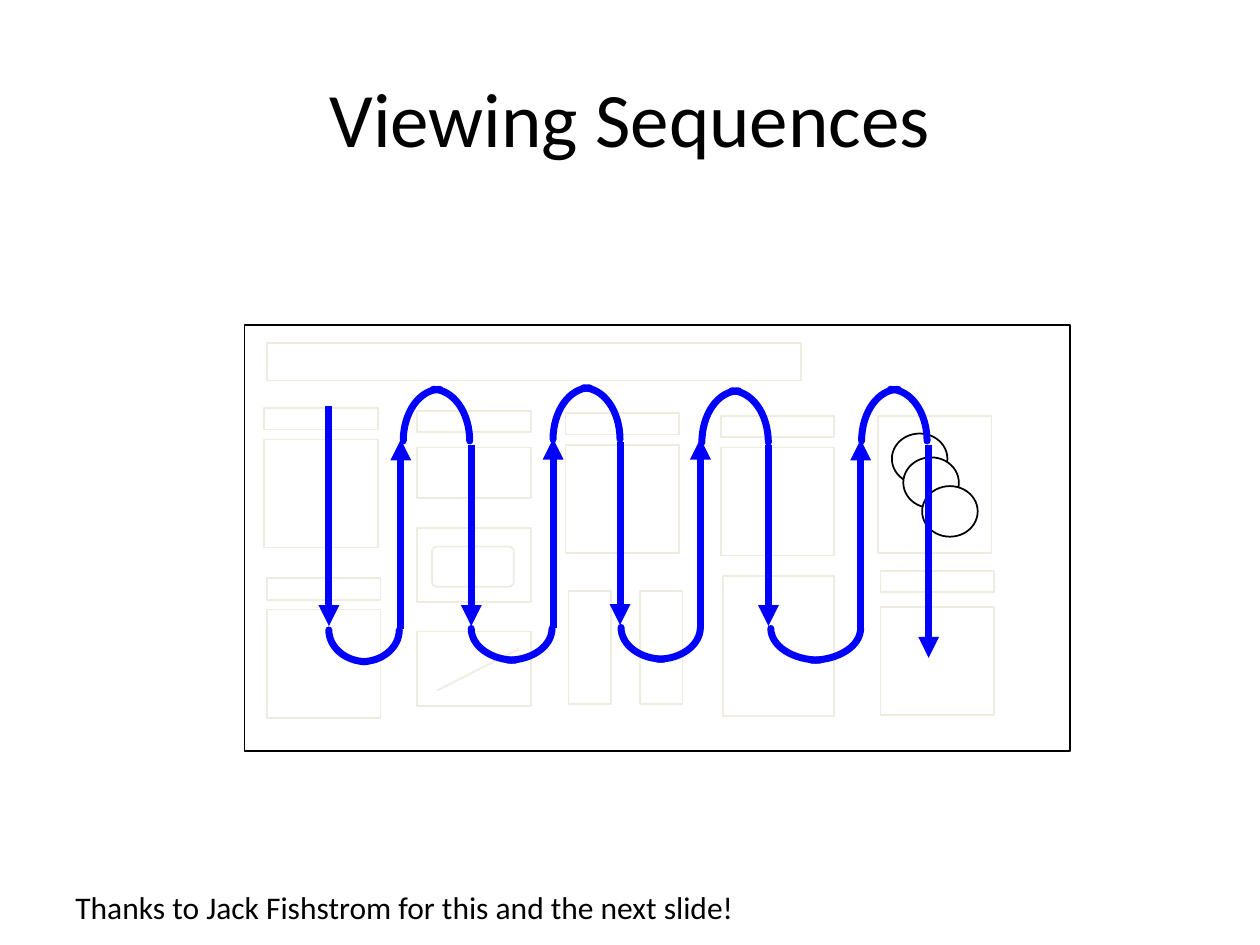
from math import cos, pi, sin

from lxml.etree import SubElement
from pptx import Presentation
from pptx.dml.color import RGBColor
from pptx.enum.shapes import MSO_CONNECTOR, MSO_SHAPE
from pptx.enum.text import MSO_ANCHOR, MSO_AUTO_SIZE, PP_ALIGN
from pptx.oxml.ns import qn
from pptx.util import Cm, Pt

BLACK = RGBColor(0x00, 0x00, 0x00)
WHITE = RGBColor(0xFF, 0xFF, 0xFF)
PALE = RGBColor(0xEE, 0xEC, 0xE1)
BLUE = RGBColor(0x00, 0x00, 0xFF)

BOX_WIDTH = 2.29
LABEL_HEIGHT = 0.43
PANEL_HEIGHT = 2.18
QUARTER_STEPS = 16

LABELLED_PANELS = [
    (5.33, 8.23, 8.86), (5.38, 11.66, 12.29), (11.4, 8.33, 8.97),
    (14.53, 8.38, 9.02), (17.75, 11.51, 12.24),
]
OTHER_BOXES = [
    (5.38, 6.91, 13.56 - 2.79, 0.76),
    (8.41, 8.28, BOX_WIDTH, LABEL_HEIGHT),
    (8.41, 9.02, BOX_WIDTH, 1.02),
    (8.41, 10.64, BOX_WIDTH, 1.5),
    (8.41, 12.73, BOX_WIDTH, 1.5),
    (11.46, 11.91, 0.86, 2.29),
    (12.9, 11.91, 0.86, 2.29),
    (14.58, 11.61, 2.24, 2.82),
    (17.7, 8.38, BOX_WIDTH, 2.77),
]
CIRCLES = [(17.98, 8.74), (18.21, 9.22), (18.59, 9.8)]
ARROWS = [
    (6.63, 8.18, 12.62), (8.08, 12.67, 8.86), (9.5, 8.97, 12.62),
    (11.15, 12.65, 8.84), (12.5, 8.92, 12.6), (14.12, 12.65, 8.84),
    (15.49, 8.97, 12.62), (17.35, 12.67, 8.86), (18.72, 8.97, 13.26),
]
UPPER_BENDS = [
    (8.13, 9.47, 8.89), (11.15, 12.5, 8.86),
    (14.15, 15.49, 8.92), (17.37, 18.69, 8.89),
]
LOWER_BENDS = [
    (6.63, 8.05, 12.7, 0.76), (9.5, 11.13, 12.67, 0.89),
    (12.52, 14.12, 12.65, 0.86), (15.54, 17.35, 12.67, 0.99),
]


def format_text(paragraph, text, size):
    paragraph.text = text
    paragraph.font.name = "Calibri"
    paragraph.font.size = Pt(size)
    paragraph.font.color.rgb = BLACK


def place_title(slide, text):
    title = slide.shapes.title
    title.left, title.top = Cm(1.27), Cm(0.76)
    title.width, title.height = Cm(22.86), Cm(3.18)
    title.text_frame.vertical_anchor = MSO_ANCHOR.MIDDLE
    paragraph = title.text_frame.paragraphs[0]
    format_text(paragraph, text, 44)
    paragraph.alignment = PP_ALIGN.CENTER


def add_credit(slide, text):
    box = slide.shapes.add_textbox(Cm(1.27), Cm(17.78), Cm(13.92), Cm(1.02))
    box.text_frame.word_wrap = False
    box.text_frame.auto_size = MSO_AUTO_SIZE.SHAPE_TO_FIT_TEXT
    format_text(box.text_frame.paragraphs[0], text, 18)


def add_outline(shapes, left, top, width, height, color, kind=MSO_SHAPE.RECTANGLE):
    shape = shapes.add_shape(kind, Cm(left), Cm(top), Cm(width), Cm(height))
    shape.shadow.inherit = False
    shape.fill.solid()
    shape.fill.fore_color.rgb = WHITE
    shape.line.color.rgb = color
    shape.line.width = Pt(1)
    return shape


def add_line(shapes, start, end, color, width):
    line = shapes.add_connector(
        MSO_CONNECTOR.STRAIGHT, Cm(start[0]), Cm(start[1]), Cm(end[0]), Cm(end[1])
    )
    line.line.color.rgb = color
    line.line.width = Pt(width)
    SubElement(line._element.spPr, qn("a:effectLst"))
    return line


def add_arrow(shapes, x, start, end):
    arrow = add_line(shapes, (x, start), (x, end), BLUE, 4)
    SubElement(arrow.line._get_or_add_ln(), qn("a:tailEnd"), type="triangle")


def add_quarter(shapes, center_x, center_y, radius_x, radius_y):
    angles = [pi / 2 * step / QUARTER_STEPS for step in range(QUARTER_STEPS + 1)]
    points = [
        (Cm(center_x + radius_x * cos(angle)), Cm(center_y + radius_y * sin(angle)))
        for angle in angles
    ]
    builder = shapes.build_freeform(*points[0])
    builder.add_line_segments(points[1:], close=False)
    quarter = builder.convert_to_shape()
    quarter.shadow.inherit = False
    quarter.fill.background()
    quarter.line.color.rgb = BLUE
    quarter.line.width = Pt(4)
    quarter.line._get_or_add_ln().set("cap", "rnd")


def add_bend(shapes, left, right, base, radius_x, radius_y):
    add_quarter(shapes, left + radius_x, base, -radius_x, radius_y)
    add_quarter(shapes, right - radius_x, base, radius_x, radius_y)


def add_poster(slide):
    add_outline(slide.shapes, 4.93, 6.55, 16.64, 8.59, BLACK)
    shapes = slide.shapes.add_group_shape().shapes
    for left, label_top, panel_top in LABELLED_PANELS:
        add_outline(shapes, left, label_top, BOX_WIDTH, LABEL_HEIGHT, PALE)
        add_outline(shapes, left, panel_top, BOX_WIDTH, PANEL_HEIGHT, PALE)
    for box in OTHER_BOXES:
        add_outline(shapes, *box, PALE)
    rounded = add_outline(
        shapes, 8.71, 11.02, 1.65, 0.81, PALE, MSO_SHAPE.ROUNDED_RECTANGLE
    )
    rounded.adjustments[0] = 0.125
    add_line(shapes, (8.81, 13.92), (10.46, 13.08), PALE, 1)


def add_circles(slide):
    shapes = slide.shapes.add_group_shape().shapes
    for left, top in CIRCLES:
        add_outline(shapes, left, top, 1.12, 1.02, BLACK, MSO_SHAPE.OVAL)


def add_viewing_path(slide):
    shapes = slide.shapes.add_group_shape().shapes
    for arrow in ARROWS:
        add_arrow(shapes, *arrow)
    for bend in UPPER_BENDS:
        add_bend(shapes, *bend, 0.74, -1.04)
    for bend in LOWER_BENDS:
        add_bend(shapes, *bend, 0.64)


def main():
    presentation = Presentation()
    presentation.slide_width = Cm(25.4)
    presentation.slide_height = Cm(19.05)
    slide = presentation.slides.add_slide(presentation.slide_layouts[5])
    place_title(slide, "Viewing Sequences")
    add_poster(slide)
    add_circles(slide)
    add_viewing_path(slide)
    add_credit(slide, "Thanks to Jack Fishstrom for this and the next slide!")
    presentation.save("out.pptx")


if __name__ == "__main__":
    main()
